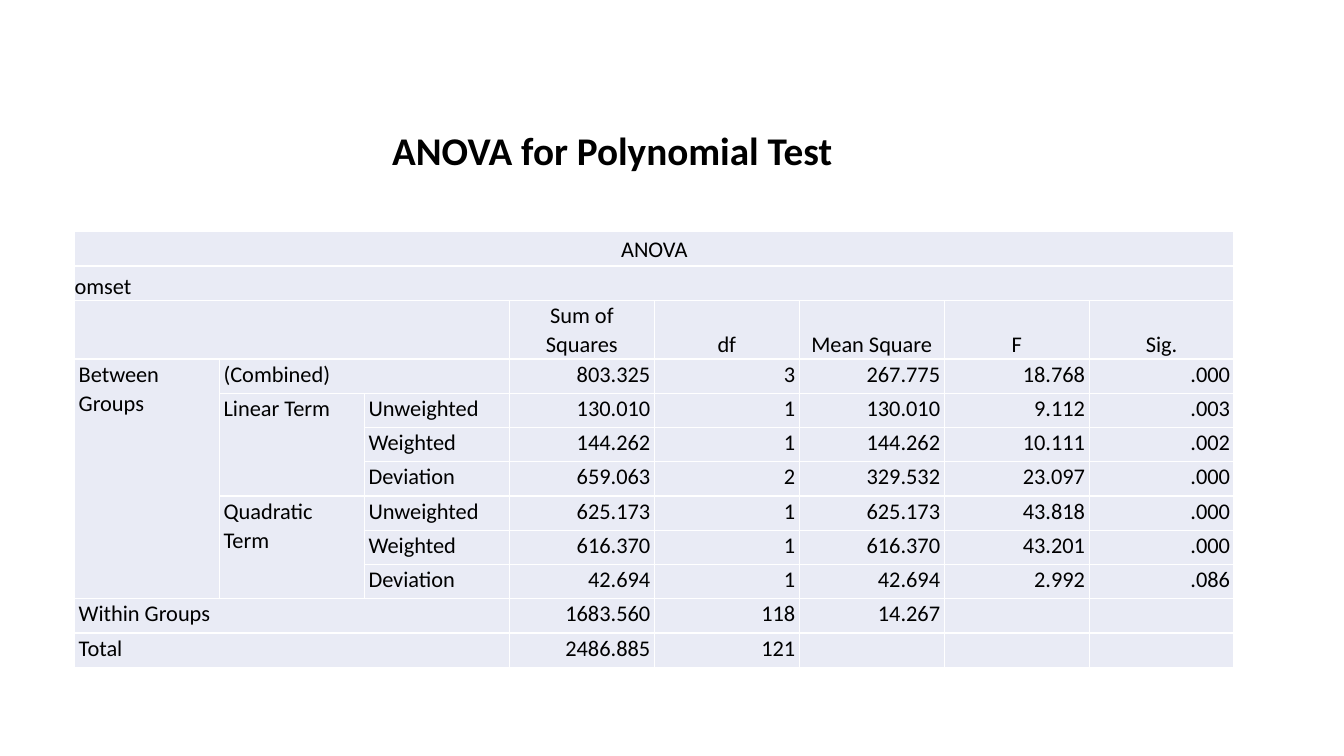
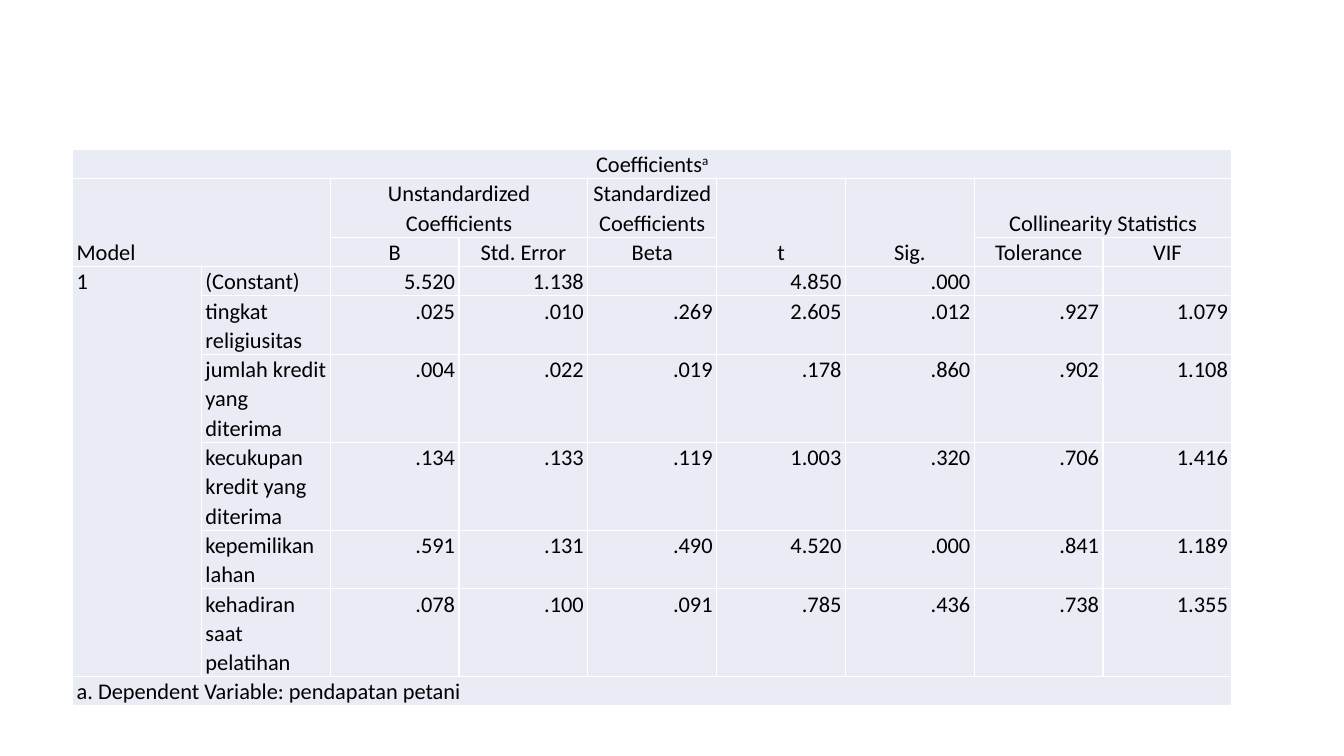
from lxml import etree
from pptx import Presentation
from pptx.dml.color import RGBColor
from pptx.enum.text import MSO_ANCHOR, PP_ALIGN
from pptx.oxml.ns import qn
from pptx.util import Inches, Pt

LEFT, CENTER, RIGHT = PP_ALIGN.LEFT, PP_ALIGN.CENTER, PP_ALIGN.RIGHT
TOP, MIDDLE, BOTTOM = MSO_ANCHOR.TOP, MSO_ANCHOR.MIDDLE, MSO_ANCHOR.BOTTOM

COLORS = {"text": "000000", "cell": "E9EBF5", "border": "FFFFFF"}
FONT = "Calibri"
TABLE_SIZE = Pt(16)
TITLE_SIZE = Pt(28)
CELL_INDENT = Inches(0.04)
BORDER_WIDTH = Pt(1)
TITLE_ONLY, BLANK = 5, 6

# Rows hold the text from the first column on; "" is an empty or covered cell.
ANOVA = {
    "box": (0.74, 2.3, 11.5),
    "columns": 8,
    "header_rows": 3,
    "label_columns": 3,
    "heights": [0.34, 0.34, 0.57] + [0.34] * 9,
    "flush": [(1, 0)],
    # row, column, rows covered, columns covered
    "spans": [(0, 0, 1, 8), (1, 0, 1, 8), (2, 0, 1, 3), (3, 0, 7, 1), (3, 1, 1, 2),
              (4, 1, 3, 1), (7, 1, 3, 1), (10, 0, 1, 3), (11, 0, 1, 3)],
    "rows": [
        ["ANOVA"],
        ["omset"],
        ["", "", "", "Sum of Squares", "df", "Mean Square", "F", "Sig."],
        ["Between Groups", "(Combined)", "", "803.325", "3", "267.775", "18.768", ".000"],
        ["", "Linear Term", "Unweighted", "130.010", "1", "130.010", "9.112", ".003"],
        ["", "", "Weighted", "144.262", "1", "144.262", "10.111", ".002"],
        ["", "", "Deviation", "659.063", "2", "329.532", "23.097", ".000"],
        ["", "Quadratic Term", "Unweighted", "625.173", "1", "625.173", "43.818", ".000"],
        ["", "", "Weighted", "616.370", "1", "616.370", "43.201", ".000"],
        ["", "", "Deviation", "42.694", "1", "42.694", "2.992", ".086"],
        ["Within Groups", "", "", "1683.560", "118", "14.267"],
        ["Total", "", "", "2486.885", "121"],
    ],
}

LINE_HEIGHT = 0.28
COEFFICIENTS = {
    "box": (0.72, 1.48, 11.5),
    "columns": 9,
    "header_rows": 3,
    "label_columns": 2,
    "heights": [LINE_HEIGHT * lines for lines in (1, 2, 1, 1, 2, 3, 3, 2, 3, 1)],
    "flush": [],
    "spans": [(0, 0, 1, 9), (1, 0, 2, 2), (1, 2, 1, 2), (1, 5, 2, 1), (1, 6, 2, 1),
              (1, 7, 1, 2), (3, 0, 6, 1), (9, 0, 1, 9)],
    "rows": [
        [("Coefficients", "a")],
        ["Model", "", "Unstandardized Coefficients", "", "Standardized Coefficients",
         "t", "Sig.", "Collinearity Statistics"],
        ["", "", "B", "Std. Error", "Beta", "", "", "Tolerance", "VIF"],
        ["1", "(Constant)", "5.520", "1.138", "", "4.850", ".000"],
        ["", "tingkat religiusitas", ".025", ".010", ".269", "2.605", ".012", ".927", "1.079"],
        ["", "jumlah kredit yang diterima",
         ".004", ".022", ".019", ".178", ".860", ".902", "1.108"],
        ["", "kecukupan kredit yang diterima",
         ".134", ".133", ".119", "1.003", ".320", ".706", "1.416"],
        ["", "kepemilikan lahan", ".591", ".131", ".490", "4.520", ".000", ".841", "1.189"],
        ["", "kehadiran saat pelatihan",
         ".078", ".100", ".091", ".785", ".436", ".738", "1.355"],
        ["a. Dependent Variable: pendapatan petani"],
    ],
}


def add_run(para, text, size, bold=False, superscript=False):
    span = para.add_run()
    span.text = text
    span.font.name = FONT
    span.font.size = size
    span.font.bold = bold
    span.font.color.rgb = RGBColor.from_string(COLORS["text"])
    if superscript:
        span._r.get_or_add_rPr().set("baseline", "30000")


def add_title(page, text, left, top, width, height):
    title = page.shapes.title
    title.left, title.top = Inches(left), Inches(top)
    title.width, title.height = Inches(width), Inches(height)
    title.text_frame.vertical_anchor = TOP
    para = title.text_frame.paragraphs[0]
    para.alignment = LEFT
    add_run(para, text, TITLE_SIZE, bold=True)


def add_borders(cell):
    properties = cell._tc.get_or_add_tcPr()
    for side in ("a:lnL", "a:lnR", "a:lnT", "a:lnB"):
        line = etree.SubElement(properties, qn(side), w=str(BORDER_WIDTH))
        fill = etree.SubElement(line, qn("a:solidFill"))
        etree.SubElement(fill, qn("a:srgbClr"), val=COLORS["border"])


def cell_layout(data, row, column):
    """Alignment and anchor follow from the cell's part of the table."""
    is_label = column < data["label_columns"]
    if row == 0:
        return CENTER, MIDDLE
    if row < data["header_rows"]:
        return (LEFT if is_label else CENTER), BOTTOM
    return (LEFT if is_label else RIGHT), TOP


def fill_cell(cell, content, alignment, anchor, indent):
    add_borders(cell)
    cell.fill.solid()
    cell.fill.fore_color.rgb = RGBColor.from_string(COLORS["cell"])
    cell.margin_left = cell.margin_right = cell.margin_top = cell.margin_bottom = 0
    cell.vertical_anchor = anchor
    para = cell.text_frame.paragraphs[0]
    para.alignment = alignment
    para.line_spacing = 1.07
    properties = para._p.get_or_add_pPr()
    for margin in ("marL", "marR"):
        properties.set(margin, str(indent))
    if not content:
        # An empty cell keeps the table's text size, so its row stays low
        etree.SubElement(para._p, qn("a:endParaRPr"), sz=str(int(TABLE_SIZE.pt * 100)))
        return
    pieces = content if isinstance(content, tuple) else (content,)
    for index, piece in enumerate(pieces):
        add_run(para, piece, TABLE_SIZE, superscript=index > 0)


def add_statistics_table(page, data):
    left, top, width = data["box"]
    columns, heights = data["columns"], data["heights"]
    table = page.shapes.add_table(len(heights), columns, Inches(left), Inches(top),
                                  Inches(width), Inches(sum(heights))).table
    table.first_row = table.horz_banding = False
    for column in table.columns:
        column.width = Inches(width / columns)
    for row, height in zip(table.rows, heights):
        row.height = Inches(height)

    # Cell text and fill
    for row, texts in enumerate(data["rows"]):
        padded = texts + [""] * (columns - len(texts))
        for column, content in enumerate(padded):
            alignment, anchor = cell_layout(data, row, column)
            indent = 0 if (row, column) in data["flush"] else CELL_INDENT
            fill_cell(table.cell(row, column), content, alignment, anchor, indent)

    # Merged cells
    for row, column, height, span in data["spans"]:
        last = table.cell(row + height - 1, column + span - 1)
        table.cell(row, column).merge(last)


def main():
    deck = Presentation()
    deck.slide_width, deck.slide_height = Inches(13.33), Inches(7.5)

    anova_page = deck.slides.add_slide(deck.slide_layouts[TITLE_ONLY])
    add_title(anova_page, "ANOVA for Polynomial Test", 3.79, 1.2, 5.4, 0.57)
    add_statistics_table(anova_page, ANOVA)

    coefficients_page = deck.slides.add_slide(deck.slide_layouts[BLANK])
    add_statistics_table(coefficients_page, COEFFICIENTS)

    deck.save("out.pptx")


if __name__ == "__main__":
    main()
